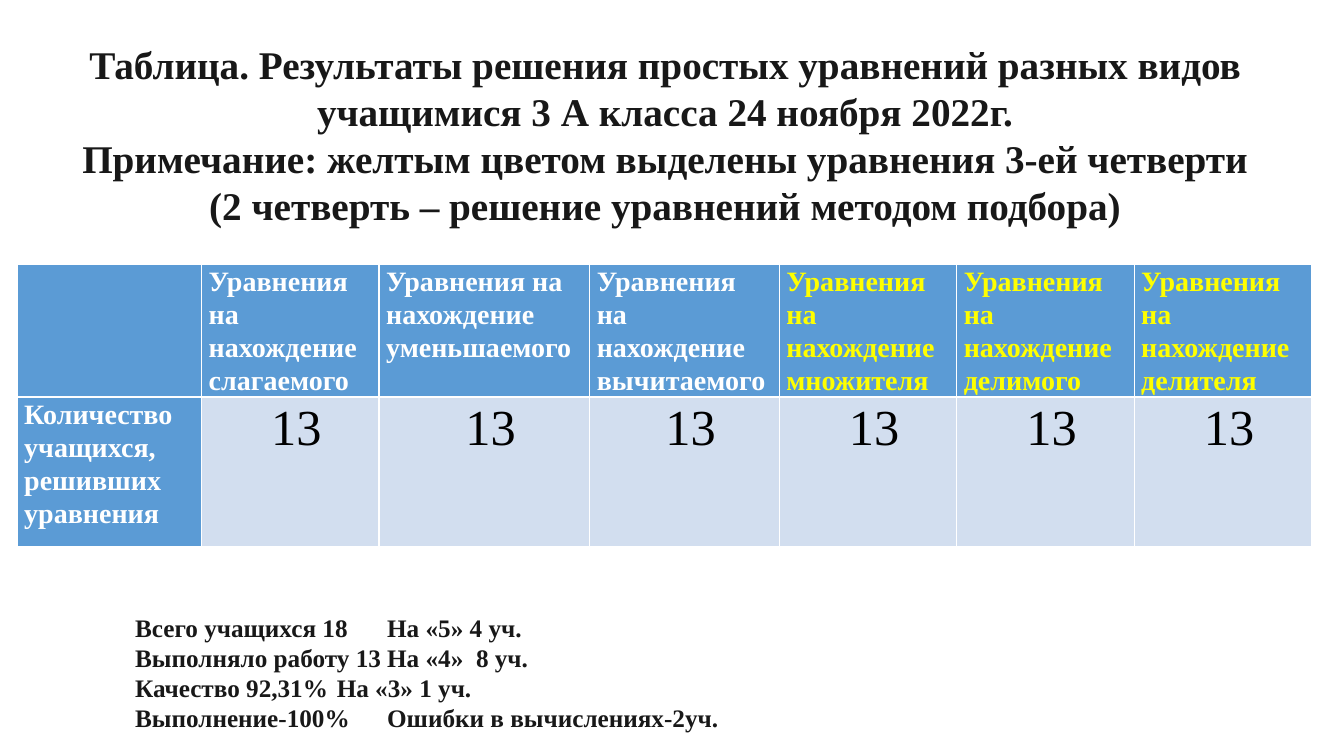
from dataclasses import dataclass

from lxml import etree
from pptx import Presentation
from pptx import util as u
from pptx.dml.color import RGBColor
from pptx.enum import text
from pptx.oxml.ns import qn


@dataclass
class Theme:
    font: str = "Times New Roman"
    ink: str = "181818"
    black: str = "000000"
    white: str = "FFFFFF"
    yellow: str = "FFFF00"
    blue: str = "5B9BD5"
    pale: str = "D2DEEF"
    title: int = 28
    body: int = 18
    head: int = 20
    score: int = 36


class Page:
    def __init__(self, slide, theme):
        self.slide = slide
        self.theme = theme

    def paint(self, item, color):
        item.fill.solid()
        item.fill.fore_color.rgb = RGBColor.from_string(color)

    def format(self, frame, size, color, bold=True, align=text.PP_ALIGN.LEFT, space=1):
        for par in frame.paragraphs:
            par.alignment = align
            par.line_spacing = space
            par.space_before = u.Pt(0)
            for run in par.runs:
                font = run.font
                font.name = self.theme.font
                font.size = u.Pt(size)
                font.bold = bold
                font.color.rgb = RGBColor.from_string(color)

    def place(self, shape, box, lines):
        shape.left, shape.top, shape.width, shape.height = map(u.Inches, box)
        frame = shape.text_frame
        frame.text = "\n".join(lines)
        frame.word_wrap = True
        frame.auto_size = text.MSO_AUTO_SIZE.NONE
        return frame

    def title(self, box, lines):
        shape = self.slide.shapes.title
        self.paint(shape, self.theme.white)
        frame = self.place(shape, box, lines)
        frame.vertical_anchor = text.MSO_ANCHOR.MIDDLE
        frame.margin_bottom = u.Inches(0.34)
        self.format(frame, self.theme.title, self.theme.ink, align=text.PP_ALIGN.CENTER)

    def notes(self, box, pairs, stop):
        frame = self.place(self.slide.placeholders[1], box, ["\t".join(p) for p in pairs])
        frame.vertical_anchor = text.MSO_ANCHOR.TOP
        self.format(frame, self.theme.body, self.theme.ink)
        for par in frame.paragraphs:
            props = par._p.get_or_add_pPr()
            props.set("marL", "0")
            props.set("indent", "0")
            etree.SubElement(props, qn("a:buNone"))
            tabs = etree.SubElement(props, qn("a:tabLst"))
            etree.SubElement(tabs, qn("a:tab"), pos=str(u.Inches(stop)), algn="l")

    def cell(self, cell, words, fill, size, color, bold=True,
             align=text.PP_ALIGN.LEFT, left=0.07):
        cell.text = words
        cell.margin_left, cell.margin_right = u.Inches(left), u.Inches(0.07)
        cell.margin_top = cell.margin_bottom = 0
        self.paint(cell, fill)
        self.format(cell.text_frame, size, color, bold, align, 1.07)

    def table(self, spot, cols, rows, kinds, late, label, scores):
        t = self.theme
        size = sum(cols), sum(rows)
        grid = self.slide.shapes.add_table(
            len(rows), len(cols), *map(u.Inches, (*spot, *size))).table
        grid.first_col = True
        for col, width in zip(grid.columns, cols):
            col.width = u.Inches(width)
        for row, height in zip(grid.rows, rows):
            row.height = u.Inches(height)
        self.cell(grid.cell(0, 0), "", t.blue, t.head, t.white)
        self.cell(grid.cell(1, 0), label, t.blue, t.head, t.white)
        for n, (kind, score) in enumerate(zip(kinds, scores), 1):
            color = t.yellow if kind in late else t.white
            self.cell(grid.cell(0, n), f"Уравнения на нахождение {kind}",
                      t.blue, t.head, color)
            self.cell(grid.cell(1, n), str(score), t.pale, t.score, t.black,
                      False, text.PP_ALIGN.CENTER, 0.19)


def main():
    deck = Presentation()
    deck.slide_width, deck.slide_height = u.Inches(13.33), u.Inches(7.5)
    page = Page(deck.slides.add_slide(deck.slide_layouts[1]), Theme())
    page.title((0.35, 0.33, 12.49, 2.29), [
        "Таблица. Результаты решения простых уравнений разных видов",
        "учащимися 3 А класса 24 ноября 2022г.",
        "Примечание: желтым цветом выделены уравнения 3-ей четверти",
        "(2 четверть – решение уравнений методом подбора)",
    ])
    early = ["слагаемого", "уменьшаемого", "вычитаемого"]
    late = ["множителя", "делимого", "делителя"]
    page.table((0.17, 2.62), [1.83, 1.76, 2.09, 1.88, 1.76, 1.76, 1.76], [1.3, 1.48],
               early + late, late, "Количество учащихся, решивших уравнения", [13] * 6)
    page.notes((1.24, 6.02, 11, 1.31), [
        ("Всего учащихся 18", "На «5» 4 уч."),
        ("Выполняло работу 13", "На «4»  8 уч."),
        ("Качество 92,31%", "На «3» 1 уч."),
        ("Выполнение-100%", "Ошибки в вычислениях-2уч."),
    ], 4.02)
    deck.save("out.pptx")


if __name__ == "__main__":
    main()
